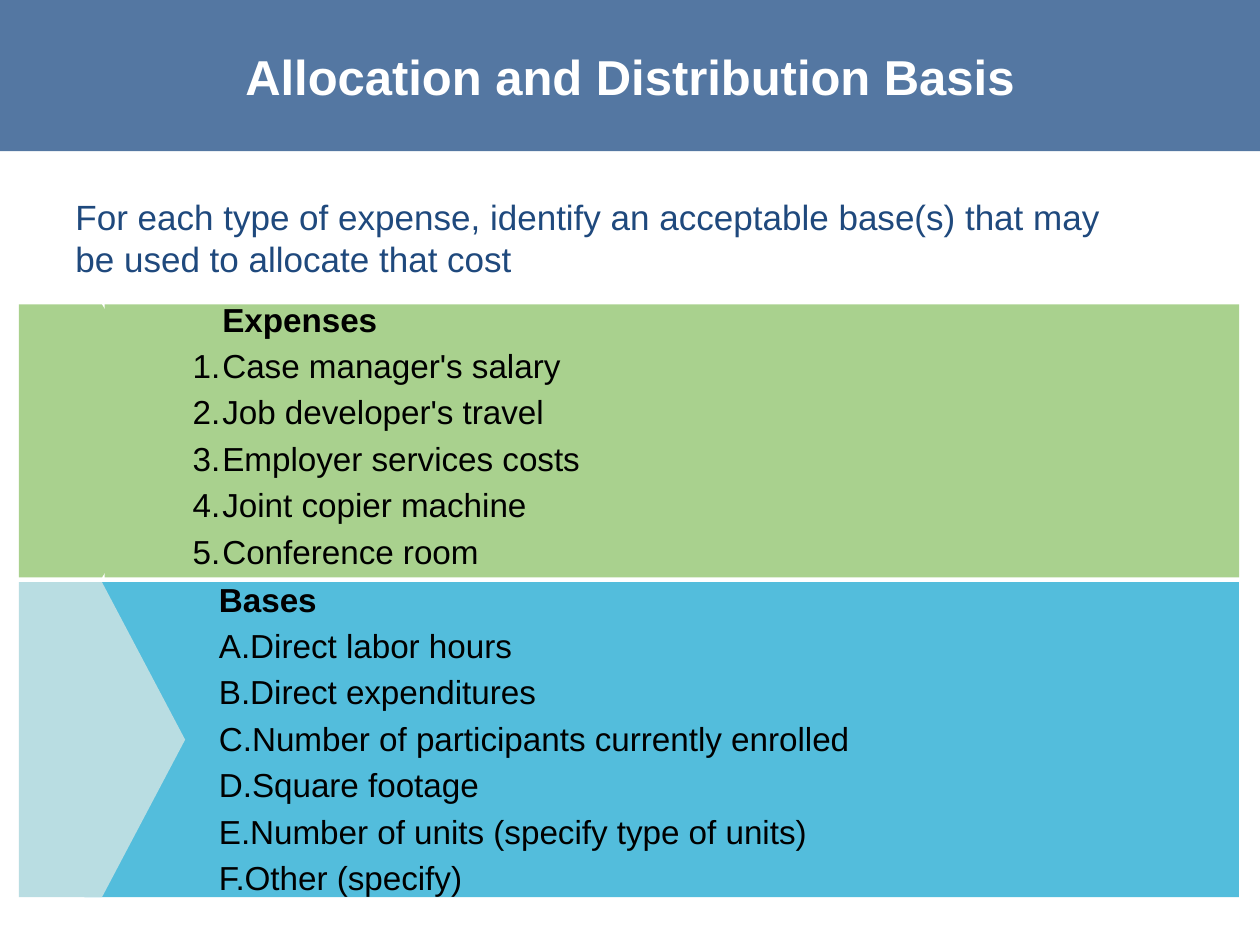
from dataclasses import dataclass

from lxml import etree
from pptx import Presentation
from pptx.dml.color import RGBColor
from pptx.enum.shapes import MSO_SHAPE
from pptx.enum.text import MSO_ANCHOR, PP_ALIGN
from pptx.oxml.ns import qn
from pptx.util import Pt

RECTANGLE = MSO_SHAPE.RECTANGLE
PENTAGON = MSO_SHAPE.PENTAGON
MIDDLE = MSO_ANCHOR.MIDDLE
CENTER = PP_ALIGN.CENTER
TITLE_ONLY = 5


@dataclass(frozen=True)
class Theme:
    font: str = "Arial"
    header: str = "376092"
    title: str = "FFFFFF"
    intro: str = "1F497D"
    body: str = "000000"
    expenses: str = "A9D18E"
    bases: str = "53BDDC"
    bases_arrow: str = "B9DDE2"
    title_size: float = 28
    intro_size: float = 20
    list_size: float = 19


THEME = Theme()


@dataclass(frozen=True)
class Box:
    left: float
    top: float
    width: float
    height: float

    def points(self):
        return Pt(self.left), Pt(self.top), Pt(self.width), Pt(self.height)


def format_runs(paragraph, size, color, bold=False):
    for run in paragraph.runs:
        run.font.name = THEME.font
        run.font.size = Pt(size)
        run.font.bold = bold
        run.font.color.rgb = RGBColor.from_string(color)


def add_filled(slide, kind, box, color):
    filled = slide.shapes.add_shape(kind, *box.points())
    filled.shadow.inherit = False
    filled.fill.solid()
    filled.fill.fore_color.rgb = RGBColor.from_string(color)
    filled.line.fill.background()
    return filled


def add_text_frame(slide, box):
    frame = slide.shapes.add_textbox(*box.points()).text_frame
    frame.word_wrap = True
    return frame


def add_header(slide, box, wording):
    banner = add_filled(slide, RECTANGLE, box, THEME.header)
    color = banner.fill._xPr.find(qn("a:solidFill"))[0]
    etree.SubElement(color, qn("a:alpha")).set("val", "85000")

    title = slide.shapes.title
    title.element.addprevious(banner.element)
    title.left, title.top, title.width, title.height = box.points()
    frame = title.text_frame
    frame.text = wording
    frame.vertical_anchor = MIDDLE
    frame.paragraphs[0].alignment = CENTER
    format_runs(frame.paragraphs[0], THEME.title_size, THEME.title, True)


def add_intro(slide, box, wording):
    frame = add_text_frame(slide, box)
    frame.text = wording
    format_runs(frame.paragraphs[0], THEME.intro_size, THEME.intro)


def set_numbering(paragraph, scheme, margin, indent):
    properties = paragraph._p.get_or_add_pPr()
    properties.set("marL", str(Pt(margin)))
    properties.set("indent", str(Pt(indent)))
    if scheme:
        numbering = etree.SubElement(properties, qn("a:buAutoNum"))
        numbering.set("type", scheme)


def add_list(slide, box, heading, items, scheme, margin, hanging):
    frame = add_text_frame(slide, box)
    frame.text = "\n".join([heading, *items])
    for position, paragraph in enumerate(frame.paragraphs):
        is_item = position > 0
        set_numbering(paragraph, scheme if is_item else None,
                      margin, -hanging if is_item else 0)
        paragraph.line_spacing = 0.9
        if is_item:
            paragraph.space_before = Pt(6)
        format_runs(paragraph, THEME.list_size, THEME.body, not is_item)


def add_band(slide, box, inset, color, arrow_color):
    strip_box = Box(box.left + inset, box.top, box.width - inset, box.height)
    strip = add_filled(slide, PENTAGON, strip_box, color)
    strip.adjustments[0] = 0
    arrow_box = Box(box.left, box.top, 95, box.height)
    add_filled(slide, PENTAGON, arrow_box, arrow_color)


def add_expenses(slide, box):
    add_band(slide, box, 49, THEME.expenses, THEME.expenses)
    items = ["Case manager's salary", "Job developer's travel",
             "Employer services costs", "Joint copier machine",
             "Conference room"]
    list_box = Box(box.left + 73.2, box.top - 4.2, 437, 190)
    add_list(slide, list_box, "Expenses", items, "arabicPeriod", 36, 17)


def add_bases(slide, box):
    add_band(slide, box, 37.4, THEME.bases, THEME.bases_arrow)
    items = ["Direct labor hours", "Direct expenditures",
             "Number of participants currently enrolled", "Square footage",
             "Number of units (specify type of units)", "Other (specify)"]
    list_box = Box(box.left + 107.2, box.top - 2.9, 602, 188.6)
    add_list(slide, list_box, "Bases", items, "alphaUcPeriod", 0, 0)


def main():
    deck = Presentation()
    deck.slide_width, deck.slide_height = Pt(720), Pt(540)
    slide = deck.slides.add_slide(deck.slide_layouts[TITLE_ONLY])
    add_header(slide, Box(0, 0, 720, 86.4), "Allocation and Distribution Basis")
    add_intro(slide, Box(36, 108, 624, 60),
              "For each type of expense, identify an acceptable base(s) "
              "that may be used to allocate that cost")
    add_expenses(slide, Box(10.8, 174, 697.2, 156))
    add_bases(slide, Box(10.8, 332.7, 697.2, 180))
    deck.save("out.pptx")


if __name__ == "__main__":
    main()
